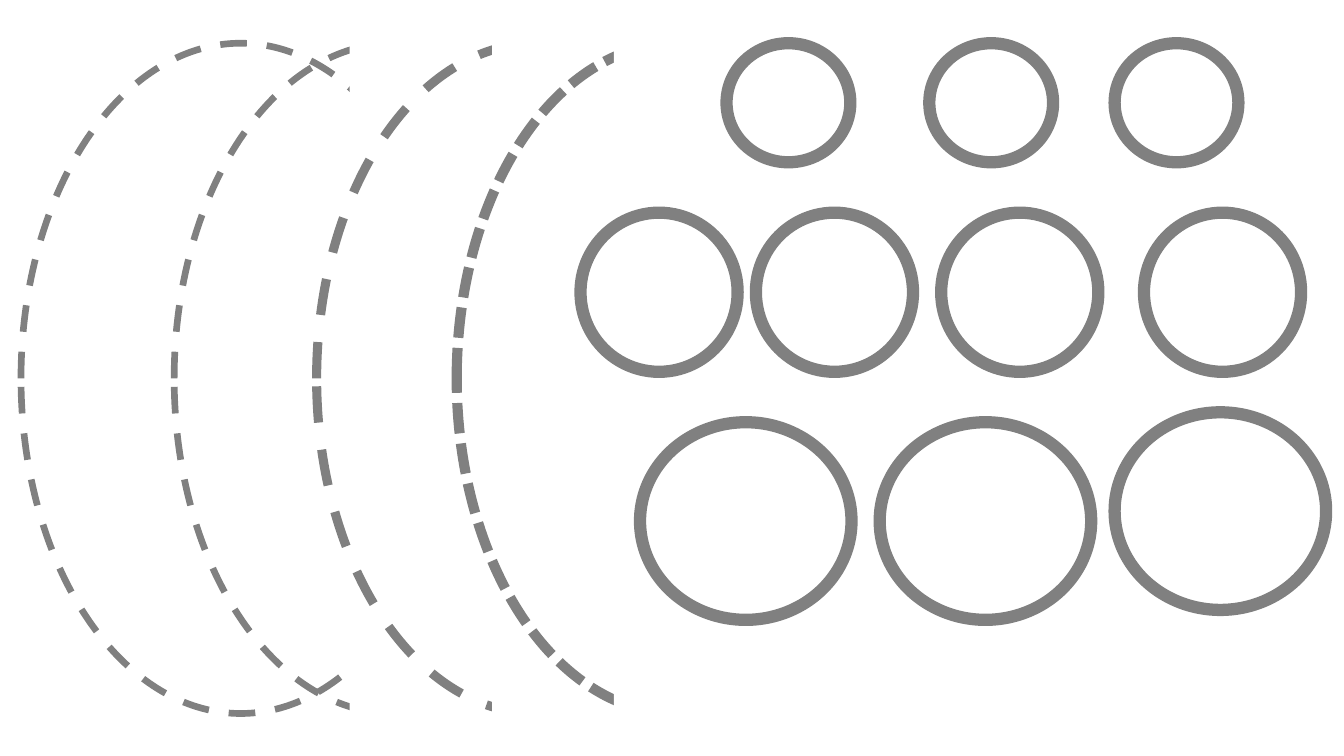
import pptx
import pptx.util
import pptx.dml.color
import pptx.enum.dml
import pptx.enum.shapes

Cm = pptx.util.Cm
Pt = pptx.util.Pt
SHAPE = pptx.enum.shapes.MSO_SHAPE
DASH = pptx.enum.dml.MSO_LINE_DASH_STYLE


def color(hex_string):
    return pptx.dml.color.RGBColor.from_string(hex_string)


class SlideBuilder:
    GRAY = "808080"
    WHITE = "FFFFFF"
    RING_WIDTH = 8.75

    def __init__(self, slide):
        self.slide = slide

    def add_shape(self, kind, left, top, width, height):
        shape = self.slide.shapes.add_shape(
            kind, Cm(left), Cm(top), Cm(width), Cm(height))
        shape.shadow.inherit = False
        return shape

    def ellipse(self, left, top, width, height, line_width=RING_WIDTH, dash=None):
        """Add an unfilled gray ellipse, solid unless a dash style is given."""
        shape = self.add_shape(SHAPE.OVAL, left, top, width, height)
        shape.fill.background()
        shape.line.color.rgb = color(self.GRAY)
        shape.line.width = Pt(line_width)
        if dash is not None:
            shape.line.dash_style = dash

    def mask(self, left, top, width, height):
        """Add a white rectangle that covers the right part of the ellipses below."""
        shape = self.add_shape(SHAPE.RECTANGLE, left, top, width, height)
        shape.fill.solid()
        shape.fill.fore_color.rgb = color(self.WHITE)
        shape.line.fill.background()


# Ellipse left, line width, dash style, left of the mask laid over it
DASHED_ARCS = [
    (0.53, 4.75, DASH.DASH, None),
    (4.39, 4.75, DASH.DASH, 8.81),
    (7.98, 6.5, DASH.DASH, 12.4),
    (11.51, 7.25, DASH.SQUARE_DOT, 15.47),
]

# Ring width, ring height, (left, top) of each ring
RING_ROWS = [
    (3.12, 3.0, [(18.31, 1.09), (23.42, 1.09), (28.09, 1.09)]),
    (3.96, 4.01, [(14.63, 5.36), (19.05, 5.36), (23.72, 5.36), (28.83, 5.36)]),
    (5.33, 4.98, [(16.13, 10.64), (22.17, 10.64), (28.09, 10.39)]),
]


def main():
    presentation = pptx.Presentation()
    presentation.slide_width = Cm(33.87)
    presentation.slide_height = Cm(19.05)
    builder = SlideBuilder(
        presentation.slides.add_slide(presentation.slide_layouts[6]))

    for left, line_width, dash, mask_left in DASHED_ARCS:
        builder.ellipse(left, 1.09, 11.07, 16.89, line_width, dash)
        if mask_left is not None:
            builder.mask(mask_left, 0.66, 9.78, 17.73)

    for width, height, corners in RING_ROWS:
        for left, top in corners:
            builder.ellipse(left, top, width, height)

    presentation.save("out.pptx")


if __name__ == "__main__":
    main()
